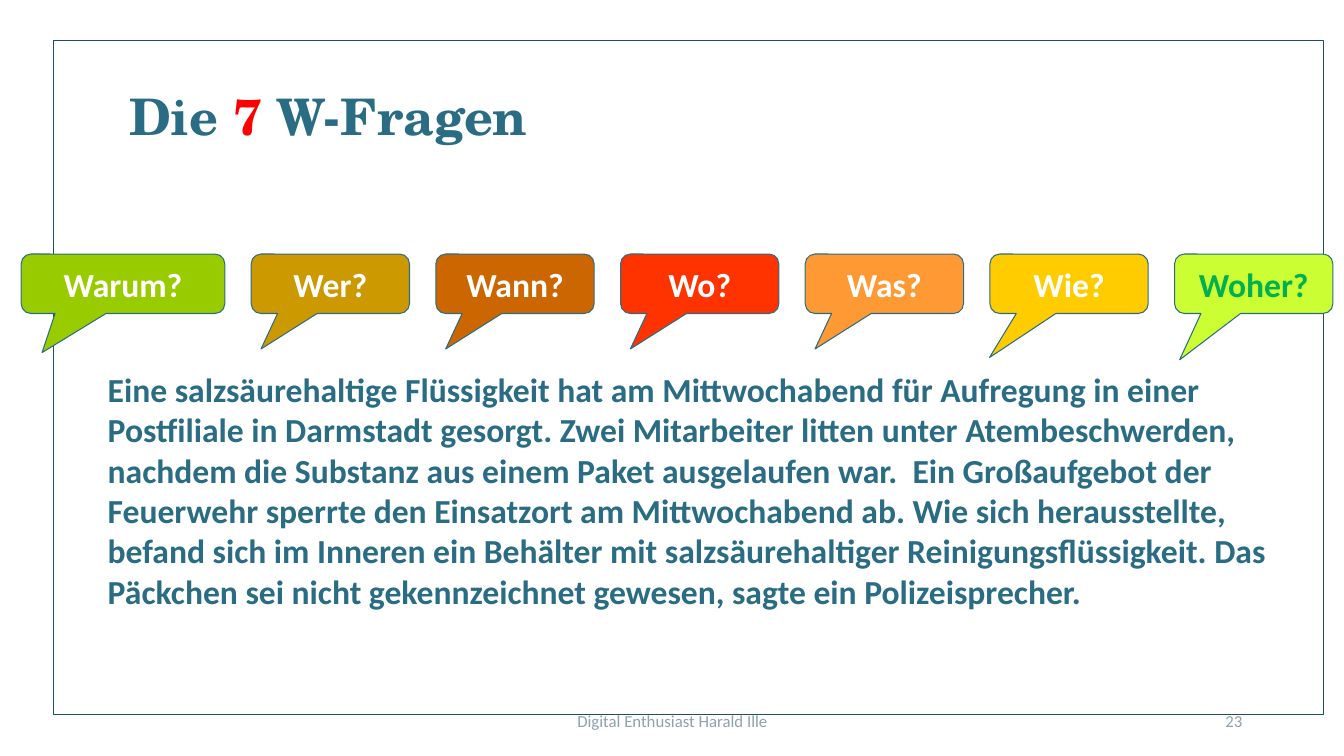
from pptx import Presentation
from pptx.dml.color import RGBColor
from pptx.enum.shapes import MSO_SHAPE
from pptx.enum.text import MSO_ANCHOR, PP_ALIGN
from pptx.util import Pt

PX = 9144  # 100 px to the inch
TITLE_ONLY = 5
CALLOUT = MSO_SHAPE.ROUNDED_RECTANGULAR_CALLOUT
RECTANGLE = MSO_SHAPE.RECTANGLE
TOP, MIDDLE = MSO_ANCHOR.TOP, MSO_ANCHOR.MIDDLE
LEFT, CENTER, RIGHT = PP_ALIGN.LEFT, PP_ALIGN.CENTER, PP_ALIGN.RIGHT

TITLE_FONT, BODY_FONT = "TeX Gyre Schola", "Calibri"
WHITE = RGBColor(0xFF, 0xFF, 0xFF)
FRAME_LINE = RGBColor(0x1F, 0x50, 0x61)
TEAL = RGBColor(0x2A, 0x6C, 0x83)
RED = RGBColor(0xFF, 0x00, 0x00)
GREEN = RGBColor(0x00, 0xB0, 0x50)
GREY = RGBColor(0x8E, 0xA2, 0xAD)

USUAL_TIP = (-0.438, 1.097)
# label, fill, text colour, tip of the pointer
QUESTIONS = [
    ("Warum?", RGBColor(0x99, 0xCC, 0x00), WHITE, (-0.397, 1.156)),
    ("Wer?", RGBColor(0xCC, 0x99, 0x00), WHITE, USUAL_TIP),
    ("Wann?", RGBColor(0xCC, 0x66, 0x00), WHITE, USUAL_TIP),
    ("Wo?", RGBColor(0xFF, 0x33, 0x00), WHITE, USUAL_TIP),
    ("Was?", RGBColor(0xFF, 0x99, 0x33), WHITE, USUAL_TIP),
    ("Wie?", RGBColor(0xFF, 0xCC, 0x00), WHITE, (-0.503, 1.24)),
    ("Woher?", RGBColor(0xCC, 0xFF, 0x33), GREEN, (-0.468, 1.279)),
]
FIRST_WIDTH, OTHER_WIDTH = 202, 157

REPORT = (
    "Eine salzsäurehaltige Flüssigkeit hat am Mittwochabend für Aufregung in einer "
    "Postfiliale in Darmstadt gesorgt. Zwei Mitarbeiter litten unter Atembeschwerden, "
    "nachdem die Substanz aus einem Paket ausgelaufen war.  Ein Großaufgebot der "
    "Feuerwehr sperrte den Einsatzort am Mittwochabend ab. Wie sich herausstellte, "
    "befand sich im Inneren ein Behälter mit salzsäurehaltiger Reinigungsflüssigkeit. "
    "Das Päckchen sei nicht gekennzeichnet gewesen, sagte ein Polizeisprecher."
)


def emu(box):
    return [round(length * PX) for length in box]


def style_font(font, name, size, color, bold):
    font.name, font.size, font.bold = name, Pt(size), bold
    font.color.rgb = color


def write(shape, text, size, color, bold=True, align=LEFT, anchor=TOP):
    """Fill the shape with one wrapped paragraph in the body font."""
    frame = shape.text_frame
    frame.word_wrap = True
    frame.vertical_anchor = anchor
    paragraph = frame.paragraphs[0]
    paragraph.text = text
    paragraph.alignment = align
    style_font(paragraph.font, BODY_FONT, size, color, bold)


def add_box(slide, kind, box, fill, line, line_width):
    shape = slide.shapes.add_shape(kind, *emu(box))
    shape.shadow.inherit = False
    shape.fill.solid()
    shape.fill.fore_color.rgb = fill
    shape.line.color.rgb = line
    shape.line.width = Pt(line_width)
    return shape


def add_text(slide, box, *args, **options):
    write(slide.shapes.add_textbox(*emu(box)), *args, **options)


def place_title(slide, box):
    title = slide.shapes.title
    title.left, title.top, title.width, title.height = emu(box)
    # Bring the title in front of the filled frame
    title.element.getparent().append(title.element)
    title.text_frame.vertical_anchor = TOP
    paragraph = title.text_frame.paragraphs[0]
    paragraph.alignment = LEFT
    style_font(paragraph.font, TITLE_FONT, 36, TEAL, True)
    for text, color in (("Die ", TEAL), ("7", RED), (" W-Fragen", TEAL)):
        run = paragraph.add_run()
        run.text = text
        run.font.color.rgb = color


def add_questions(slide, box):
    """Spread the callouts over the box with equal gaps."""
    left, top, width, height = box
    others = len(QUESTIONS) - 1
    gap = (width - FIRST_WIDTH - others * OTHER_WIDTH) / others
    for index, (label, fill, color, tip) in enumerate(QUESTIONS):
        callout_width = OTHER_WIDTH if index else FIRST_WIDTH
        callout = add_box(slide, CALLOUT, (left, top, callout_width, height), fill, TEAL, 0.75)
        callout.adjustments[0], callout.adjustments[1] = tip
        write(callout, label, 24, color, align=CENTER, anchor=MIDDLE)
        left += callout_width + gap


def add_footer(slide, box):
    left, top, width, height = box
    add_text(slide, (left, top, 450, height), "Digital Enthusiast Harald Ille",
             12, GREY, bold=False, align=CENTER, anchor=MIDDLE)
    add_text(slide, (left + width - 300, top, 300, height), "23",
             12, GREY, bold=False, align=RIGHT, anchor=MIDDLE)


def main():
    presentation = Presentation()
    presentation.slide_width, presentation.slide_height = emu((1333, 750))
    slide = presentation.slides.add_slide(presentation.slide_layouts[TITLE_ONLY])
    add_box(slide, RECTANGLE, (53, 40, 1260, 669), WHITE, FRAME_LINE, 1)
    place_title(slide, (118, 79, 465, 70))
    add_text(slide, (97, 361, 1184, 239), REPORT, 24, TEAL)
    add_questions(slide, (21, 252, 1301, 59))
    add_footer(slide, (442, 695, 800, 40))
    presentation.save("out.pptx")


if __name__ == "__main__":
    main()
